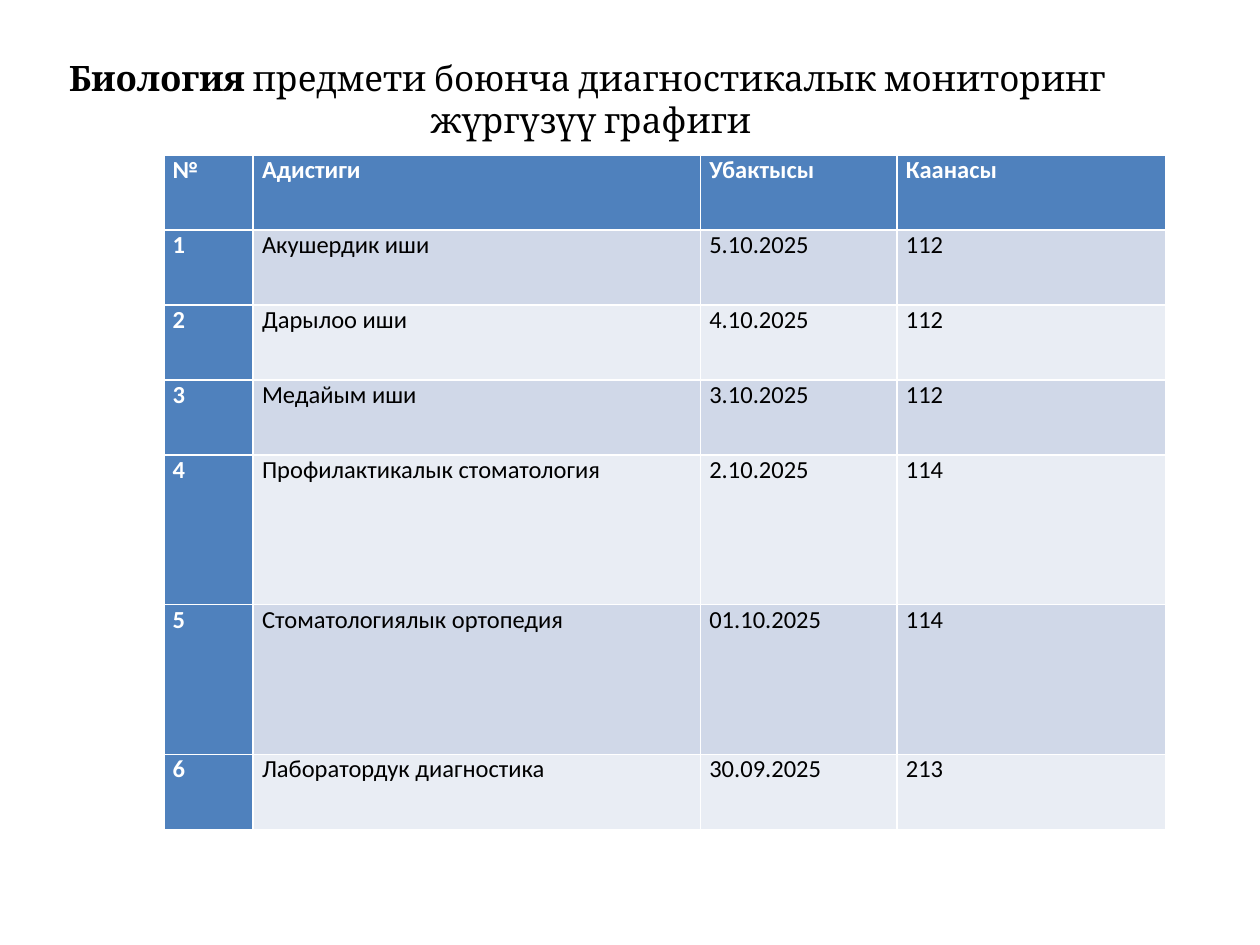
from pptx import Presentation
from pptx.dml.color import RGBColor
from pptx.enum import text
from pptx.util import Inches, Pt

BLACK = RGBColor(0x00, 0x00, 0x00)
WHITE = RGBColor(0xFF, 0xFF, 0xFF)
BLUE = RGBColor(0x4F, 0x81, 0xBD)
BAND_DARK = RGBColor(0xD0, 0xD8, 0xE8)
BAND_LIGHT = RGBColor(0xE9, 0xED, 0xF4)

HEADINGS = ("№", "Адистиги", "Убактысы", "Каанасы")
SCHEDULE = (
    ("Акушердик иши", "5.10.2025", "112"),
    ("Дарылоо иши", "4.10.2025", "112"),
    ("Медайым иши", "3.10.2025", "112"),
    ("Профилактикалык стоматология", "2.10.2025", "114"),
    ("Стоматологиялык ортопедия", "01.10.2025", "114"),
    ("Лаборатордук диагностика", "30.09.2025", "213"),
)
COLUMN_WIDTHS = (0.71, 3.55, 1.56, 2.13)
ROW_HEIGHT = 0.595
TALL_ROWS = (4, 5)


def apply_format(target, values):
    for name, value in values.items():
        setattr(target, name, value)


def format_font(font, color, **values):
    apply_format(font, values)
    font.color.rgb = color


def add_title(slide, left, top, width, height):
    title = slide.shapes.title
    apply_format(title, {"left": left, "top": top, "width": width, "height": height})
    frame = title.text_frame
    apply_format(frame, {
        "word_wrap": True,
        "auto_size": text.MSO_AUTO_SIZE.NONE,
        "vertical_anchor": text.MSO_ANCHOR.MIDDLE,
        "margin_bottom": Inches(0.35),
    })
    paragraph = frame.paragraphs[0]
    paragraph.alignment = text.PP_ALIGN.CENTER
    subject = paragraph.add_run()
    subject.text = "Биология"
    first_line = paragraph.add_run()
    first_line.text = " предмети боюнча диагностикалык мониторинг "
    paragraph.add_line_break()
    second_line = paragraph.add_run()
    second_line.text = "жүргүзүү графиги"
    for run in (subject, first_line, second_line):
        format_font(run.font, BLACK, name="Cambria", size=Pt(20), bold=run is subject)


def fill_cell(cell, content, fill, color, bold):
    apply_format(cell, {
        "text": content,
        "margin_left": Inches(0.07),
        "margin_right": Inches(0.07),
        "margin_top": 0,
        "margin_bottom": 0,
    })
    cell.fill.solid()
    cell.fill.fore_color.rgb = fill
    run = cell.text_frame.paragraphs[0].runs[0]
    format_font(run.font, color, name="Calibri", size=Pt(14), bold=bold)


def add_schedule(slide, left, top, width, height):
    rows = [HEADINGS]
    rows += [(str(number), *entry) for number, entry in enumerate(SCHEDULE, 1)]
    table = slide.shapes.add_table(
        len(rows), len(HEADINGS), left, top, width, height).table
    table.first_col = True
    for column, column_width in zip(table.columns, COLUMN_WIDTHS):
        column.width = Inches(column_width)
    for row_index, row in enumerate(rows):
        scale = 2 if row_index in TALL_ROWS else 1
        table.rows[row_index].height = Inches(ROW_HEIGHT * scale)
        band = BAND_DARK if row_index % 2 else BAND_LIGHT
        for column_index, content in enumerate(row):
            is_header = row_index == 0 or column_index == 0
            fill_cell(
                table.cell(row_index, column_index), content,
                BLUE if is_header else band,
                WHITE if is_header else BLACK, is_header)


def main():
    presentation = Presentation()
    presentation.slide_width = Inches(10)
    presentation.slide_height = Inches(7.5)
    slide = presentation.slides.add_slide(presentation.slide_layouts[5])
    add_schedule(slide, Inches(1.3), Inches(1.23), Inches(7.95), Inches(5.35))
    add_title(slide, Inches(0.28), Inches(0.39), Inches(8.82), Inches(1.08))
    presentation.save("out.pptx")


if __name__ == "__main__":
    main()
